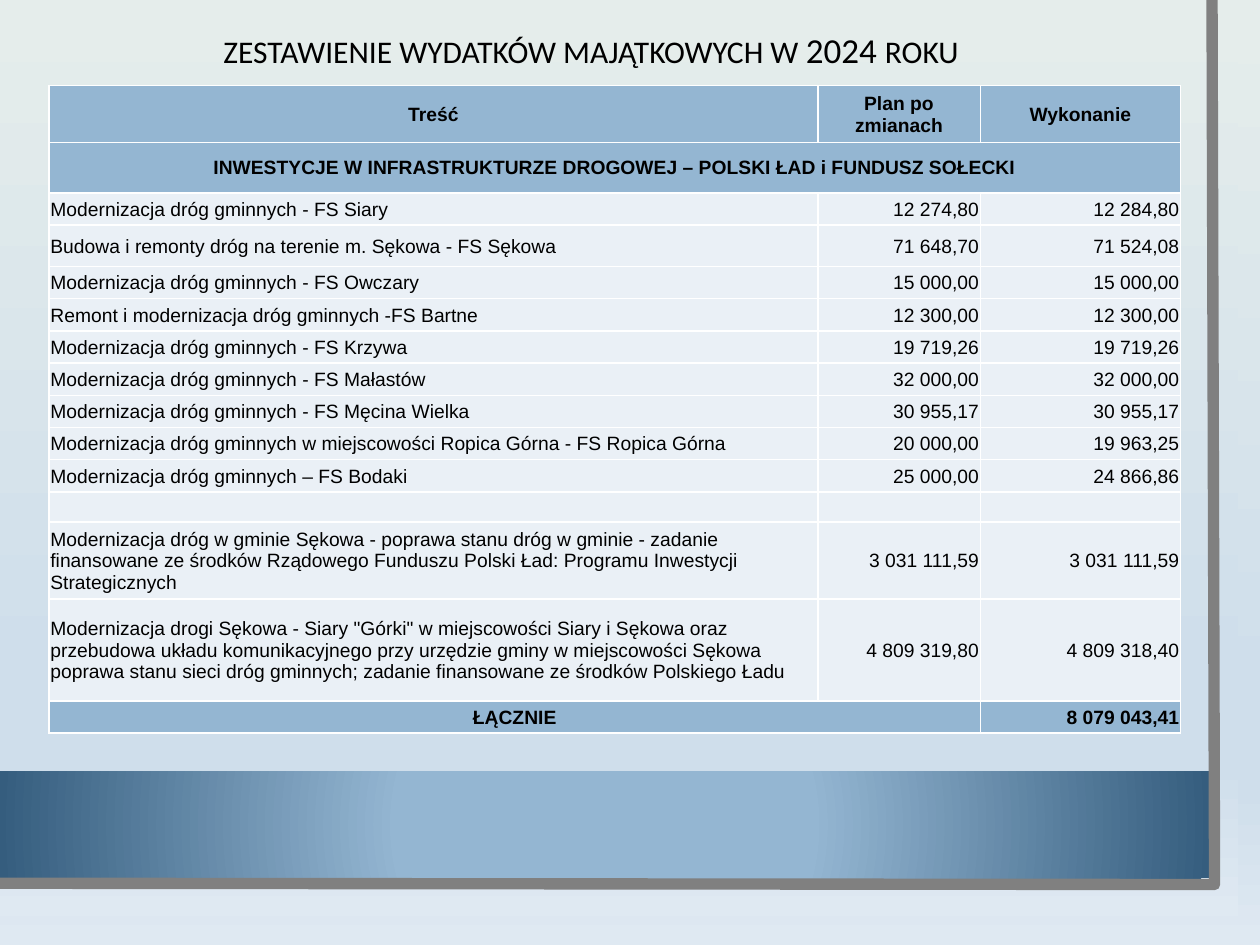
import pptx
import pptx.dml.color
import pptx.enum.text
import pptx.oxml.ns
import pptx.util
from lxml import etree

Inches, Pt = pptx.util.Inches, pptx.util.Pt
ALIGN = pptx.enum.text.PP_ALIGN
MIDDLE = pptx.enum.text.MSO_ANCHOR.MIDDLE
qn = pptx.oxml.ns.qn

BLUE, PALE, NAVY = "94B6D2", "EAF0F6", "355D7E"
SKY = [(0, "E5EDEB"), (74, "CFDEEB"), (83, "CFDEEB"), (100, "DFE9F2")]
GLOW = [(34, BLUE), (100, NAVY)]

TITLE = [("ZESTAWIENIE WYDATKÓW MAJĄTKOWYCH W ", 18), ("2024 ", 20), ("ROKU", 18)]
HEAD = ("Treść", "Plan po zmianach", "Wykonanie")
PART = "INWESTYCJE W INFRASTRUKTURZE DROGOWEJ – POLSKI ŁAD i FUNDUSZ SOŁECKI"
ITEMS = [
    ("Modernizacja dróg gminnych - FS Siary", "12 274,80", "12 284,80"),
    ("Budowa i remonty dróg na terenie m. Sękowa - FS Sękowa", "71 648,70", "71 524,08"),
    ("Modernizacja dróg gminnych - FS Owczary", "15 000,00", "15 000,00"),
    ("Remont i modernizacja dróg gminnych -FS Bartne", "12 300,00", "12 300,00"),
    ("Modernizacja dróg gminnych - FS Krzywa", "19 719,26", "19 719,26"),
    ("Modernizacja dróg gminnych - FS Małastów", "32 000,00", "32 000,00"),
    ("Modernizacja dróg gminnych - FS Męcina Wielka", "30 955,17", "30 955,17"),
    ("Modernizacja dróg gminnych w miejscowości Ropica Górna - FS Ropica Górna",
     "20 000,00", "19 963,25"),
    ("Modernizacja dróg gminnych – FS Bodaki", "25 000,00", "24 866,86"),
    ("", "", ""),
    ("Modernizacja dróg w gminie Sękowa - poprawa stanu dróg w gminie - zadanie "
     "finansowane ze środków Rządowego Funduszu Polski Ład: Programu Inwestycji "
     "Strategicznych", "3 031 111,59", "3 031 111,59"),
    ("Modernizacja drogi Sękowa - Siary \"Górki\" w miejscowości Siary i Sękowa oraz "
     "przebudowa układu komunikacyjnego przy urzędzie gminy w miejscowości Sękowa \v"
     "poprawa stanu sieci dróg gminnych; zadanie finansowane ze środków Polskiego Ładu",
     "4 809 319,80", "4 809 318,40"),
]
TOTAL = ("ŁĄCZNIE", "", "8 079 043,41")

COLS = [6.1, 1.29, 1.59]
TALL = {0: 0.45, 1: 0.4, 3: 0.33, 11: 0.24, 12: 0.61, 13: 0.81}  # other rows share the rest


def color(code):
    return pptx.dml.color.RGBColor.from_string(code)


def apply(item, values):
    for name, value in values.items():
        setattr(item, name, value)


def add(parent, tag, **attrs):
    return etree.SubElement(parent, qn(tag), attrs)


class Deck:
    cell = dict(margin_left=Inches(0.01), margin_right=Inches(0.01),
                margin_top=Inches(0.01), margin_bottom=0, vertical_anchor=MIDDLE)
    small = dict(name="Arial", size=Pt(11))
    large = dict(name="Calibri")

    def __init__(self, show):
        self.slide = show.slides.add_slide(show.slide_layouts[6])
        self.shapes = self.slide.shapes

    def blend(self, fill, owner, stops, round_=False):
        """Turn a fill into a gradient with the given stops."""
        fill.gradient()
        grad = next(owner.iter(qn("a:gradFill")))
        for child in list(grad):
            grad.remove(child)
        listing = add(grad, "a:gsLst")
        for pos, code in stops:
            add(add(listing, "a:gs", pos=str(pos * 1000)), "a:srgbClr", val=code)
        if round_:
            mid = dict.fromkeys("ltrb", "50000")
            add(add(grad, "a:path", path="circle"), "a:fillToRect", **mid)
        else:
            add(grad, "a:lin", ang="5400000", scaled="0")

    def ground(self, stops):
        self.blend(self.slide.background.fill, self.slide.element, stops)

    def panel(self, box, stops, round_=False):
        rect = self.shapes.add_shape(1, *map(Inches, box))
        rect.shadow.inherit = False
        rect.line.fill.background()
        self.blend(rect.fill, rect.element, stops, round_)

    def edge(self, points, code, width):
        first, *rest = [(Inches(x), Inches(y)) for x, y in points]
        pen = self.shapes.build_freeform(*first)
        pen.add_line_segments(rest, close=False)
        line = pen.convert_to_shape()
        line.shadow.inherit = False
        line.fill.background()
        line.line.color.rgb = color(code)
        line.line.width = Pt(width)

    def title(self, box, parts):
        frame = self.shapes.add_textbox(*map(Inches, box)).text_frame
        apply(frame, dict(word_wrap=True, margin_left=Inches(0.44),
                          auto_size=pptx.enum.text.MSO_AUTO_SIZE.SHAPE_TO_FIT_TEXT))
        para = frame.paragraphs[0]
        apply(para, dict(alignment=ALIGN.CENTER, line_spacing=1.15))
        for text, size in parts:
            run = para.add_run()
            run.text = text
            apply(run.font, dict(self.large, size=Pt(size)))
            run.font.color.rgb = color("000000")

    def table(self, box, cols, rows):
        grid = self.shapes.add_table(len(rows), len(cols), *map(Inches, box)).table
        apply(grid, dict(first_row=False, horz_banding=False))
        for col, width in zip(grid.columns, cols):
            col.width = Inches(width)
        rest = (box[3] - sum(TALL.values())) / (len(rows) - len(TALL))
        for r, row in enumerate(rows):
            grid.rows[r].height = Inches(TALL.get(r, rest))
            strong = r < 2 or r == len(rows) - 1
            for c, text in enumerate(row):
                if r < 2 or (strong and c == 0):
                    align = ALIGN.CENTER
                else:
                    align = ALIGN.RIGHT if c else ALIGN.LEFT
                self.fill_cell(grid.cell(r, c), text, align, strong)
        return grid

    def fill_cell(self, cell, text, align, strong):
        apply(cell, self.cell)
        cell.text = text
        para = cell.text_frame.paragraphs[0]
        para.alignment = align
        for run in para.runs:
            apply(run.font, dict(self.small, bold=strong))
            run.font.color.rgb = color("000000")
        if not text:
            add(para._p, "a:endParaRPr", sz="1100")
        # White rules on all four sides
        props = cell._tc.get_or_add_tcPr()
        for side in "LRTB":
            rule = add(props, "a:ln" + side, w=str(Pt(1)))
            add(add(rule, "a:solidFill"), "a:srgbClr", val="FFFFFF")
        cell.fill.solid()
        cell.fill.fore_color.rgb = color(BLUE if strong else PALE)


def main():
    show = pptx.Presentation()
    apply(show, dict(slide_width=Inches(10), slide_height=Inches(7.5)))
    deck = Deck(show)

    # Backdrop with a glowing band and a grey frame
    deck.ground(SKY)
    deck.panel((0, 0, 9.83, 7.27), SKY)
    deck.panel((0, 6.12, 9.6, 0.85), GLOW, round_=True)
    deck.edge([(9.62, 0), (9.64, 7.02), (-0.02, 7.01)], "808080", 6.5)

    # Heading
    deck.title((0.03, 0.13, 8.98, 0.48), TITLE)

    # Spending table
    rows = [HEAD, (PART, "", ""), *ITEMS, TOTAL]
    grid = deck.table((0.39, 0.68, 8.98, 5.14), COLS, rows)
    last = len(rows) - 1
    grid.cell(1, 0).merge(grid.cell(1, 2))
    grid.cell(last, 0).merge(grid.cell(last, 1))

    show.save("out.pptx")


if __name__ == "__main__":
    main()
